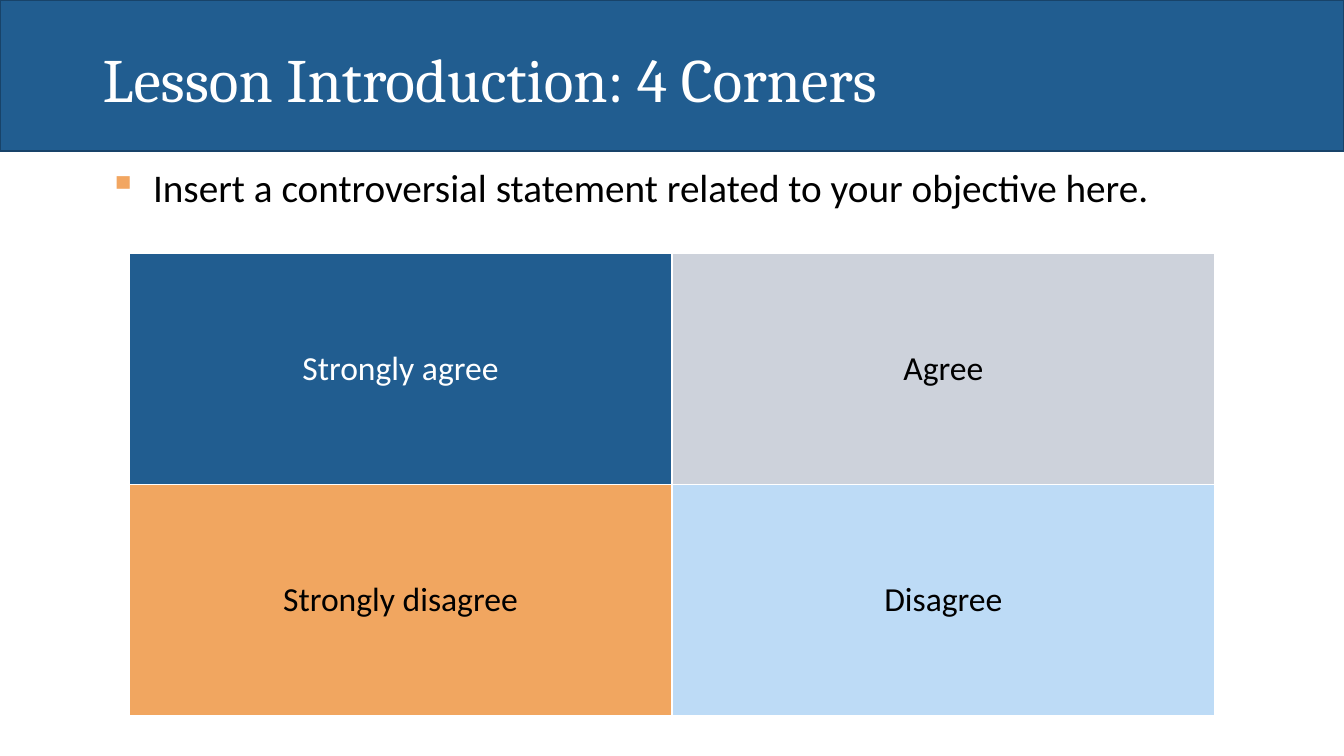
import dataclasses
import pptx
import pptx.util
import pptx.dml.color
import pptx.enum.shapes
import pptx.enum.text
import pptx.oxml

Inches = pptx.util.Inches
Pt = pptx.util.Pt
Anchor = pptx.enum.text.MSO_ANCHOR
Align = pptx.enum.text.PP_ALIGN
NS = 'xmlns:a="http://schemas.openxmlformats.org/drawingml/2006/main"'


@dataclasses.dataclass(frozen=True)
class Theme:
    blue: str = "215D90"
    edge: str = "184369"
    gray: str = "CDD2DB"
    gold: str = "F1A660"
    sky: str = "BDDBF6"
    mark: str = "F2A661"
    white: str = "FFFFFF"
    black: str = "000000"
    serif: str = "Cambria"
    sans: str = "Calibri"
    title: int = 44
    body: int = 28
    cell: int = 24


THEME = Theme()
WIDE, HIGH = 13.33, 7.5
BAND = (0, 0, WIDE, HIGH / 5)
BODY = (0.92, 1.62, 11.5, 5.07)
GRID = (1.28, 2.51, 10.77, 4.59)
CORNERS = (
    (("Strongly agree", THEME.blue, THEME.white),
     ("Agree", THEME.gray, THEME.black)),
    (("Strongly disagree", THEME.gold, THEME.black),
     ("Disagree", THEME.sky, THEME.black)),
)


def color(code):
    return pptx.dml.color.RGBColor.from_string(code)


def paint(fill, code):
    fill.solid()
    fill.fore_color.rgb = color(code)


def style(para, face, size, code):
    para.font.name = face
    para.font.size = Pt(size)
    para.font.color.rgb = color(code)


def write(slide, box, text, face, size, code, anchor):
    frame = slide.shapes.add_textbox(*map(Inches, box)).text_frame
    frame.word_wrap = True
    frame.vertical_anchor = anchor
    para = frame.paragraphs[0]
    para.text = text
    para.line_spacing = 0.9
    style(para, face, size, code)
    return para


def add_header(slide, box, text):
    left, top, width, height = box
    band = slide.shapes.add_shape(
        pptx.enum.shapes.MSO_SHAPE.RECTANGLE, *map(Inches, box))
    band.shadow.inherit = False
    paint(band.fill, THEME.blue)
    band.line.color.rgb = color(THEME.edge)
    band.line.width = Pt(1)
    inner = (left + 0.92, top + 0.13, width - 1.83, height - 0.13)
    write(slide, inner, text, THEME.serif, THEME.title, THEME.white,
          Anchor.MIDDLE)


def add_prompt(slide, box, text):
    para = write(slide, box, text, THEME.sans, THEME.body, THEME.black,
                 Anchor.TOP)
    para.space_before = Pt(10)
    props = para._p.get_or_add_pPr()
    props.set("marL", str(Inches(0.5)))
    props.set("indent", str(Inches(-0.44)))
    for part in (f'<a:buClr {NS}><a:srgbClr val="{THEME.mark}"/></a:buClr>',
                 f'<a:buChar {NS} char="▪"/>'):
        mark = pptx.oxml.parse_xml(part)
        props.insert_element_before(mark, "a:tabLst", "a:defRPr", "a:extLst")


def add_border(cell):
    props = cell._tc.get_or_add_tcPr()
    for place, side in enumerate("LRTB"):
        props.insert(place, pptx.oxml.parse_xml(
            f'<a:ln{side} {NS} w="{Pt(1)}"><a:solidFill>'
            f'<a:srgbClr val="{THEME.white}"/></a:solidFill></a:ln{side}>'))


def add_corners(slide, box, rows):
    table = slide.shapes.add_table(
        len(rows), len(rows[0]), *map(Inches, box)).table
    table.first_row = False
    table.horz_banding = False
    for y, row in enumerate(rows):
        for x, (text, fill, ink) in enumerate(row):
            cell = table.cell(y, x)
            cell.text = text
            cell.vertical_anchor = Anchor.MIDDLE
            paint(cell.fill, fill)
            add_border(cell)
            para = cell.text_frame.paragraphs[0]
            para.alignment = Align.CENTER
            style(para, THEME.sans, THEME.cell, ink)


def main():
    deck = pptx.Presentation()
    deck.slide_width = Inches(WIDE)
    deck.slide_height = Inches(HIGH)
    slide = deck.slides.add_slide(deck.slide_layouts[6])
    add_header(slide, BAND, "Lesson Introduction: 4 Corners")
    add_prompt(slide, BODY,
               "Insert a controversial statement related to your objective here.")
    add_corners(slide, GRID, CORNERS)
    deck.save("out.pptx")


if __name__ == "__main__":
    main()
